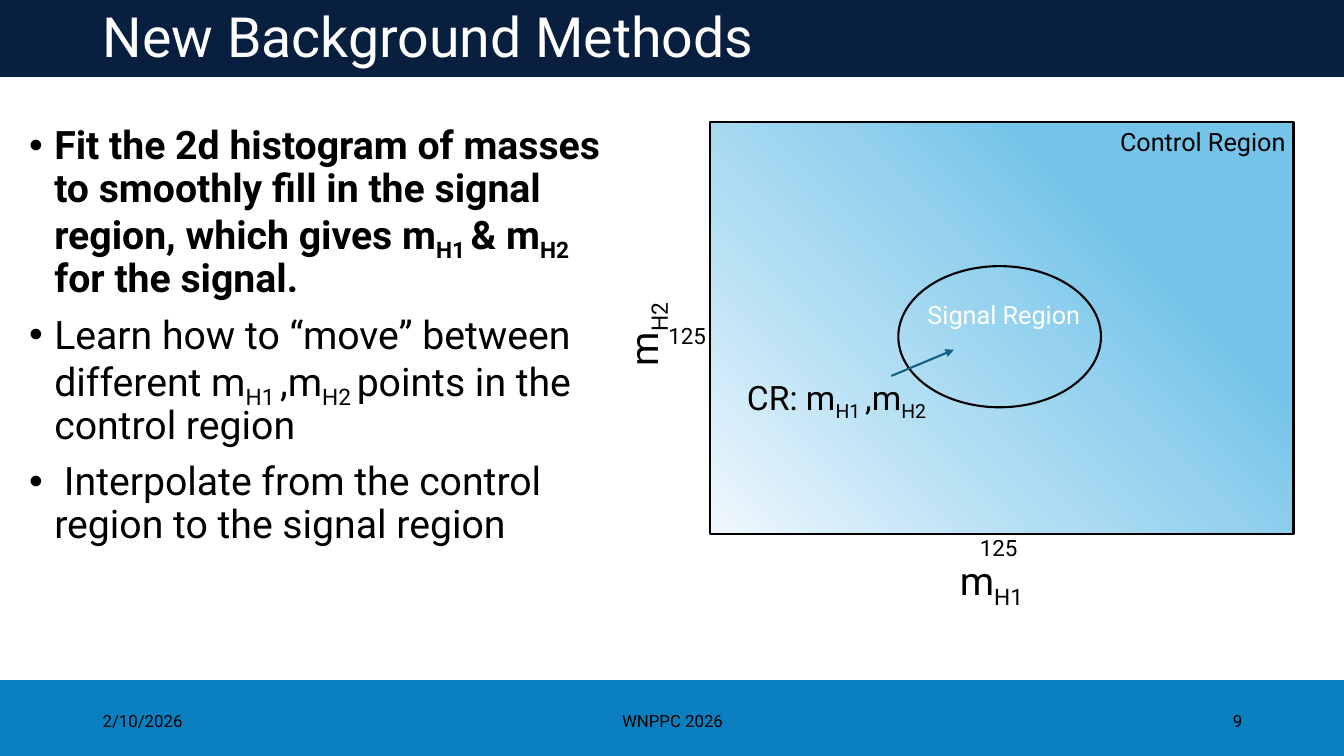
from lxml.etree import SubElement as Sub
from pptx import Presentation
from pptx.dml.color import RGBColor
from pptx.enum.shapes import MSO_CONNECTOR as Link, MSO_SHAPE as Form
from pptx.enum.text import MSO_ANCHOR as Anchor, PP_ALIGN as Align
from pptx.oxml.ns import qn
from pptx.util import Inches, Pt

WIDE, HIGH = Inches(13.33), Inches(7.5)
FACE, BLACK, WHITE = "Roboto", "000000", "FFFFFF"
NAVY, BLUE, TEAL = "091F3F", "0B80C0", "156082"

# Places are percent of slide width and height; text between bars is subscript.
TITLE = "New Background Methods", (6.9, 0.4, 86.27, 9.73)
BARS = [((0, 90.13, 100, 9.87), BLUE), ((0, 0.13, 100, 9.87), NAVY)]
BODY = (1.43, 16, 44.64, 65.6)
POINTS = [
    ("Fit the 2d histogram of masses to smoothly fill in the signal region, "
     "which gives m|H1 |& m|H2| for the signal.", True),
    ("Learn how to “move” between different m|H1 |,m|H2 |"
     "points in the control region", False),
    (" Interpolate from the control region to the signal region", False),
]
FOOT = [
    ("2/10/2026", 6.9, 22.5, Align.LEFT),
    ("WNPPC 2026", 33.16, 33.76, Align.CENTER),
    ("9", 70.67, 22.5, Align.RIGHT),
]
PLOT = (52.81, 16.13, 43.44, 54.53)
STOPS = [(0, "F0F8FD"), (34, "B2DEF3"), (54, "93D1EE"),
         (72, "74C4E9"), (100, "74C4E9"), (100, "A2D8F0")]
OVAL = (66.84, 35.2, 15.08, 18.67)
LABELS = [
    ("m|H2", (39.68, 30.13, 17.03, 8.93), 28, BLACK, 270),
    ("m|H1", (70.67, 72.93, 16.65, 9.07), 28, BLACK, 0),
    ("Control Region", (82.6, 16, 16.65, 5.33), 18, BLACK, 0),
    ("Signal Region", (68.27, 38.93, 13.13, 5.33), 18, WHITE, 0),
    ("CR: m|H1 |,m|H2", (54.84, 49.2, 16.13, 6.67), 24, BLACK, 0),
    ("125", (48.99, 42, 4.5, 4.93), 16, BLACK, 0),
    ("125", (72.17, 70, 4.5, 4.93), 16, BLACK, 0),
]
ARROW = (66.32, 49.73, 70.97, 46.27)


def rgb(code):
    return RGBColor.from_string(code)


def span(box):
    return [round(part * size / 100) for part, size in zip(box, (WIDE, HIGH) * 2)]


def write(para, text, size, color=BLACK, bold=False):
    for spot, piece in enumerate(text.split("|")):
        run = para.add_run()
        run.text = piece
        font = run.font
        font.name, font.size, font.bold = FACE, Pt(size), bold
        font.color.rgb = rgb(color)
        if spot % 2:
            run._r.get_or_add_rPr().set("baseline", "-25000")


def frame(slide, box, turn=0):
    shape = slide.shapes.add_textbox(*span(box))
    shape.rotation = turn
    shape.text_frame.word_wrap = True
    return shape.text_frame


def draw(slide, form, box, line, fill=None):
    shape = slide.shapes.add_shape(form, *span(box))
    shape.shadow.inherit = False
    shape.line.color.rgb = rgb(line)
    shape.line.width = Pt(1.5)
    if fill:
        shape.fill.solid()
        shape.fill.fore_color.rgb = rgb(fill)
    else:
        shape.fill.background()
    return shape


def shade(shape):
    shape.fill.gradient()
    shape.fill.gradient_angle = 45
    stops = shape._element.spPr.find(".//" + qn("a:gsLst"))
    for old in list(stops):
        stops.remove(old)
    for place, color in STOPS:
        stop = Sub(stops, qn("a:gs"), pos=str(place * 1000))
        Sub(stop, qn("a:srgbClr"), val=color)


def head(slide):
    for box, color in BARS:
        draw(slide, Form.RECTANGLE, box, color, color)
    text, box = TITLE
    title = slide.shapes.title
    title.left, title.top, title.width, title.height = span(box)
    slide.shapes._spTree.append(title._element)
    title.text_frame.vertical_anchor = Anchor.MIDDLE
    para = title.text_frame.paragraphs[0]
    para.alignment, para.line_spacing = Align.LEFT, 0.9
    write(para, text, 39.6, WHITE)


def body(slide):
    area = frame(slide, BODY)
    for spot, (text, bold) in enumerate(POINTS):
        para = area.add_paragraph() if spot else area.paragraphs[0]
        props = para._p.get_or_add_pPr()
        props.set("marL", str(Inches(0.25)))
        props.set("indent", str(-Inches(0.25)))
        Sub(props, qn("a:buFont"), typeface="Arial")
        Sub(props, qn("a:buChar"), char="•")
        para.line_spacing = 0.9
        if spot:
            para.space_before = Pt(10)
        write(para, text, 28, bold=bold)


def foot(slide):
    for text, left, width, side in FOOT:
        area = frame(slide, (left, 92.67, width, 5.33))
        area.vertical_anchor = Anchor.MIDDLE
        area.paragraphs[0].alignment = side
        write(area.paragraphs[0], text, 12)


def plot(slide):
    shade(draw(slide, Form.RECTANGLE, PLOT, BLACK))
    draw(slide, Form.OVAL, OVAL, BLACK)
    for text, box, size, color, turn in LABELS:
        write(frame(slide, box, turn).paragraphs[0], text, size, color)
    arrow = slide.shapes.add_connector(Link.STRAIGHT, *span(ARROW))
    arrow.line.color.rgb = rgb(TEAL)
    arrow.line.width = Pt(1.5)
    Sub(arrow.line._get_or_add_ln(), qn("a:tailEnd"), type="triangle")
    Sub(arrow._element.spPr, qn("a:effectLst"))


def main():
    """Build the slide on background methods and save it."""
    deck = Presentation()
    deck.slide_width, deck.slide_height = WIDE, HIGH
    slide = deck.slides.add_slide(deck.slide_layouts[5])
    for part in (head, body, foot, plot):
        part(slide)
    deck.save("out.pptx")


if __name__ == "__main__":
    main()
